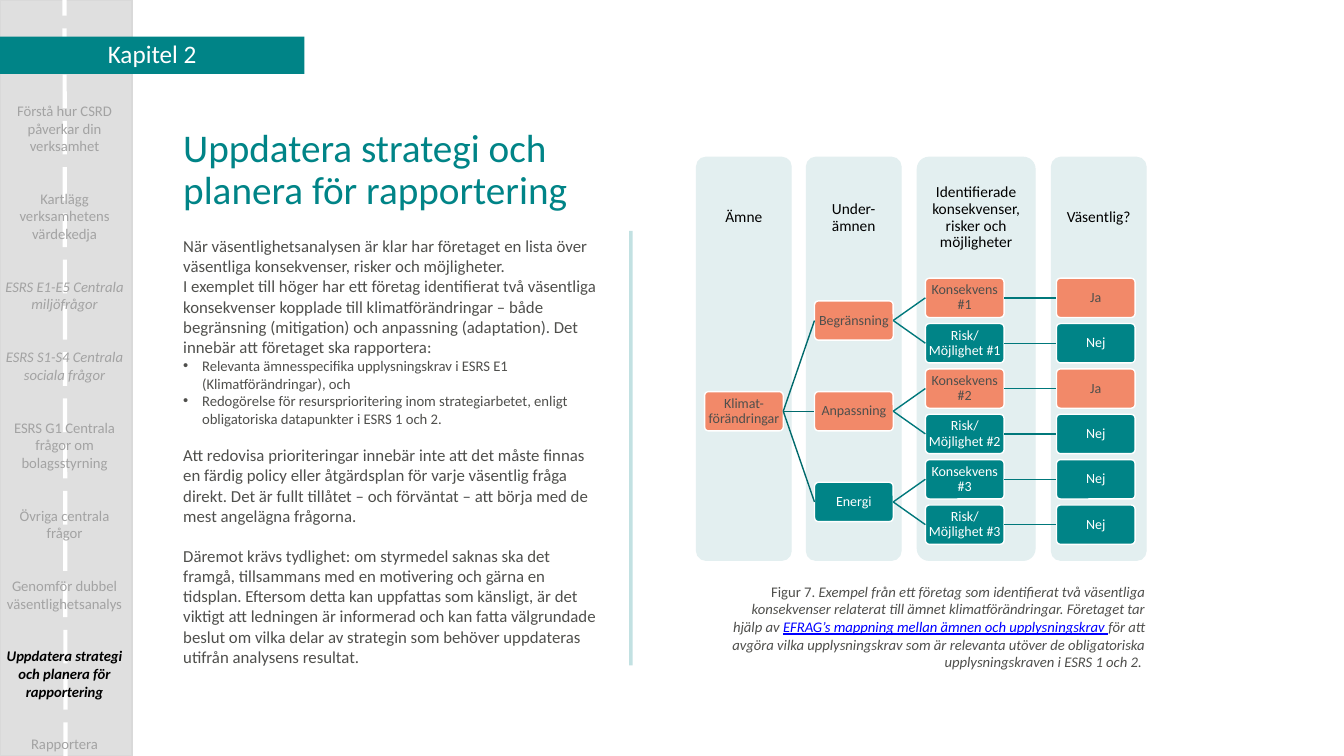
from lxml.etree import SubElement
from pptx import Presentation
from pptx.dml.color import RGBColor
from pptx.enum.dml import MSO_LINE
from pptx.enum.shapes import MSO_CONNECTOR, MSO_SHAPE as Shape
from pptx.enum.text import MSO_ANCHOR as Anchor, PP_ALIGN as Align
from pptx.oxml.ns import qn
from pptx.util import Pt

TEAL, ORANGE, WHITE, BLACK = "008487", "F28969", "FFFFFF", "000000"
TEXT, MUTED, PANEL = "4F4F4C", "A3A3A3", "E3EFF0"
LEFT_SIDE, RIGHT_SIDE = 1, 3


def rgb(value):
    return RGBColor.from_string(value)


class Board:
    """Draws on one slide in one style; all lengths are in points."""

    def __init__(self, slide, font="Calibri"):
        self.shapes = slide.shapes
        self.font = font

    def fill_text(self, shape, paragraphs, size, color, align=Align.LEFT, anchor=Anchor.TOP,
                  margins=(7.2, 3.6), spacing=None):
        """Fill a shape with (runs, paragraph format) pairs; a run is (text, font format)."""
        frame = shape.text_frame
        across, down = (Pt(margin) for margin in margins)
        layout = {"word_wrap": True, "vertical_anchor": anchor, "margin_left": across,
                  "margin_right": across, "margin_top": down, "margin_bottom": down}
        for name, value in layout.items():
            setattr(frame, name, value)
        for index, (runs, look) in enumerate(paragraphs):
            paragraph = frame.add_paragraph() if index else frame.paragraphs[0]
            paragraph.alignment = align
            if spacing:
                paragraph.line_spacing = spacing
            if "before" in look:
                paragraph.space_before = Pt(look["before"])
            if look.get("bullet"):
                self.bullet(paragraph)
            for text, style in runs:
                run = paragraph.add_run()
                run.text = text
                font = {"name": self.font, "size": Pt(look.get("size", size)), **style}
                run.font.color.rgb = rgb(font.pop("color", color))
                for name, value in font.items():
                    setattr(run.font, name, value)

    def bullet(self, paragraph, indent=13.5):
        properties = paragraph._p.get_or_add_pPr()
        properties.set("marL", str(Pt(indent)))
        properties.set("indent", str(-Pt(indent)))
        SubElement(properties, qn("a:buFont")).set("typeface", "Arial")
        SubElement(properties, qn("a:buChar")).set("char", "•")

    def text(self, box, paragraphs, size, color, **layout):
        shape = self.shapes.add_textbox(*map(Pt, box))
        self.fill_text(shape, paragraphs, size, color, **layout)

    def block(self, box, fill, line=None, width=0.75, kind=Shape.RECTANGLE, corner=None):
        shape = self.shapes.add_shape(kind, *map(Pt, box))
        shape.shadow.inherit = False
        shape.fill.solid()
        shape.fill.fore_color.rgb = rgb(fill)
        if line:
            shape.line.color.rgb = rgb(line)
            shape.line.width = Pt(width)
        else:
            shape.line.fill.background()
        if corner is not None:
            shape.adjustments[0] = corner
        return shape

    def line(self, color, width, ends=(0, 0, 0, 0), dash=None, opacity=None):
        connector = self.shapes.add_connector(MSO_CONNECTOR.STRAIGHT, *map(Pt, ends))
        connector.line.color.rgb = rgb(color)
        connector.line.width = Pt(width)
        if dash:
            connector.line.dash_style = dash
        properties = connector._element.spPr
        if opacity:
            tint = next(properties.iter(qn("a:srgbClr")))
            SubElement(tint, qn("a:alpha")).set("val", str(opacity * 1000))
        SubElement(properties, qn("a:effectLst"))
        return connector

    def node(self, left, top, label, material):
        """Draw a tree node, orange when the topic is material and teal when not."""
        shape = self.block((left, top, 56.2, 28.1), ORANGE if material else TEAL, WHITE, 1,
                           Shape.ROUNDED_RECTANGLE, 0.1)
        self.fill_text(shape, plain(label), 10, TEXT if material else WHITE,
                       align=Align.CENTER, anchor=Anchor.MIDDLE, margins=(0.7, 0.7), spacing=0.9)
        return shape

    def join(self, parent, child, color):
        branch = self.line(color, 1)
        branch.begin_connect(parent, RIGHT_SIDE)
        branch.end_connect(child, LEFT_SIDE)


def plain(text, **look):
    return [([(text, {})], look)]


CHAPTERS = [
    ("Förstå hur CSRD påverkar din verksamhet", {}),
    ("Kartlägg verksamhetens värdekedja", {}),
    ("ESRS E1-E5 Centrala miljöfrågor", {"italic": True}),
    ("ESRS S1-S4 Centrala sociala frågor", {"italic": True}),
    ("ESRS G1 Centrala frågor om bolagsstyrning", {}),
    ("Övriga centrala frågor", {}),
    ("Genomför dubbel väsentlighetsanalys", {}),
    ("Uppdatera strategi och planera för rapportering",
     {"bold": True, "italic": True, "color": BLACK}),
    ("Rapportera", {}),
]
BODY = [
    *plain("När väsentlighetsanalysen är klar har företaget en lista över väsentliga "
           "konsekvenser, risker och möjligheter."),
    *plain("I exemplet till höger har ett företag identifierat två väsentliga konsekvenser "
           "kopplade till klimatförändringar – både begränsning (mitigation) och anpassning "
           "(adaptation). Det innebär att företaget ska rapportera:"),
    *plain("Relevanta ämnesspecifika upplysningskrav i ESRS E1 (Klimatförändringar), och",
           bullet=True, size=10.5),
    *plain("Redogörelse för resursprioritering inom strategiarbetet, enligt obligatoriska "
           "datapunkter i ESRS 1 och 2.", bullet=True, size=10.5),
    *plain("Att redovisa prioriteringar innebär inte att det måste finnas en färdig policy "
           "eller åtgärdsplan för varje väsentlig fråga direkt. Det är fullt tillåtet – och "
           "förväntat – att börja med de mest angelägna frågorna.", before=12.6),
    *plain("Däremot krävs tydlighet: om styrmedel saknas ska det framgå, tillsammans med en "
           "motivering och gärna en tidsplan. Eftersom detta kan uppfattas som känsligt, är "
           "det viktigt att ledningen är informerad och kan fatta välgrundade beslut om vilka "
           "delar av strategin som behöver uppdateras utifrån analysens resultat.",
           before=14.4),
]
CAPTION = [([
    ("Figur 7. ", {}),
    ("Exempel från ett företag som identifierat två väsentliga konsekvenser relaterat till "
     "ämnet klimatförändringar. Företaget tar hjälp av ", {"italic": True}),
    ("EFRAG’s mappning mellan ämnen och upplysningskrav ",
     {"italic": True, "underline": True, "color": "0000FF"}),
    ("för att avgöra vilka upplysningskrav som är relevanta utöver de obligatoriska "
     "upplysningskraven i ESRS 1 och 2. ", {"italic": True}),
], {})]
# heading, column left, column width, node left
COLUMNS = [
    ("Ämne", 497.5, 67.7, 503.3),
    ("Under-ämnen", 576, 67.7, 581.8),
    ("Identifierade konsekvenser, risker och möjligheter", 655.2, 84.2, 661),
    ("Väsentlig?", 751, 67.7, 754.6),
]
# subtopic, subtopic is material, its consequence is material
SUBTOPICS = [("Begränsning", True, True), ("Anpassning", True, True), ("Energi", False, False)]
COLUMN_TOP, ROW_TOP, ROW_STEP = 112.3, 198.7, 32.4


def row_top(row):
    return ROW_TOP + row * ROW_STEP


def draw_road(board):
    board.block((0, 0, 94.3, 540), "DFDFDF", "D9D9D9", 1)
    board.line(WHITE, 3, (46.8, 540, 46.1, 0), dash=MSO_LINE.LONG_DASH)
    steps = [([chapter], {"before": 25.1} if index else {})
             for index, chapter in enumerate(CHAPTERS)]
    board.text((-5, 69.1, 102.2, 536.4), steps, 10.5, MUTED, align=Align.CENTER)


def draw_tree(board):
    for heading, left, width, _ in COLUMNS:
        board.block((left, COLUMN_TOP, width, 288), PANEL, PANEL,
                    kind=Shape.ROUNDED_RECTANGLE, corner=0.1)
        board.text((left, COLUMN_TOP, width, 86.4), plain(heading), 11, BLACK,
                   align=Align.CENTER, anchor=Anchor.MIDDLE, margins=(6.2, 6.2), spacing=0.9)
    topic_x, subtopic_x, impact_x, verdict_x = (column[3] for column in COLUMNS)
    topic = board.node(topic_x, row_top(2.5), "Klimat-förändringar", True)
    for index, (name, relevant, material) in enumerate(SUBTOPICS):
        subtopic = board.node(subtopic_x, row_top(2 * index + 0.5), name, relevant)
        board.join(topic, subtopic, "006A6C")
        impacts = [("Konsekvens", material), ("Risk/ Möjlighet", False)]
        for row, (kind, essential) in enumerate(impacts, start=2 * index):
            impact = board.node(impact_x, row_top(row), f"{kind} #{index + 1}", essential)
            verdict = board.node(verdict_x, row_top(row), "Ja" if essential else "Nej", essential)
            board.join(subtopic, impact, "00787B")
            board.join(impact, verdict, "00787B")


def main():
    deck = Presentation()
    deck.slide_width, deck.slide_height = Pt(960), Pt(540)
    board = Board(deck.slides.add_slide(deck.slide_layouts[6]))
    draw_road(board)
    board.text((123.8, 93.6, 308.2, 56.9),
               plain("Uppdatera strategi och planera för rapportering"), 28, TEAL,
               anchor=Anchor.MIDDLE, margins=(7.2, 0), spacing=0.9)
    chapter_bar = board.block((0, 26.2, 217.4, 26.6), TEAL)
    board.fill_text(chapter_bar, plain("Kapitel 2"), 18, WHITE, align=Align.CENTER,
                    anchor=Anchor.MIDDLE, spacing=0.9)
    board.text((123.8, 164.9, 313.2, 332.6), BODY, 12, TEXT)
    board.line(TEAL, 2.5, (450.7, 164.9, 450.7, 475.2), opacity=23)
    board.text((511.9, 412.6, 313.2, 70.6), CAPTION, 10.5, TEXT, align=Align.RIGHT)
    draw_tree(board)
    deck.save("out.pptx")


if __name__ == "__main__":
    main()
